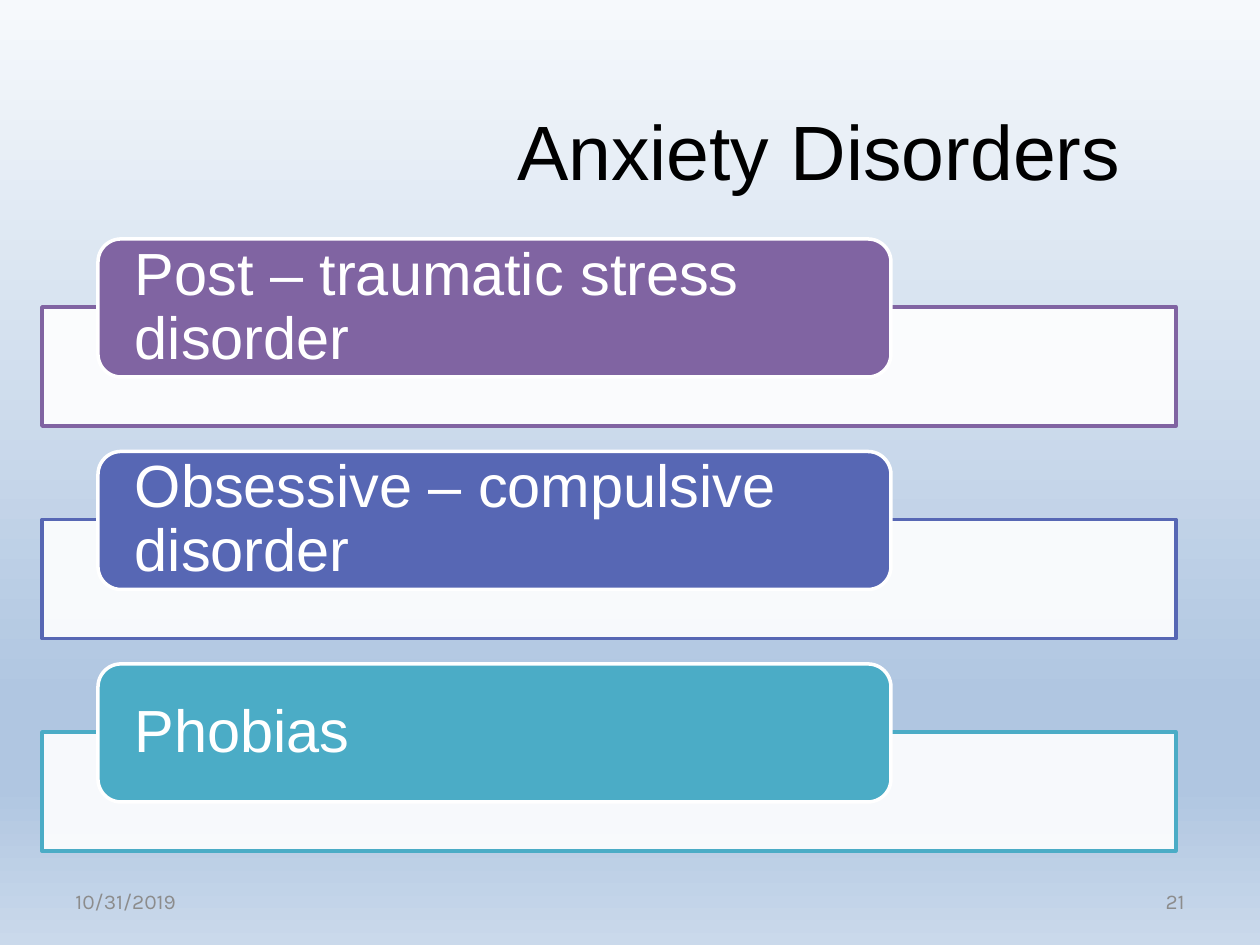
from lxml import etree
from pptx import Presentation, util as u
from pptx.dml.color import RGBColor
from pptx.enum import shapes, text
from pptx.oxml.ns import qn

SCALE = 914400 / 126
COLORS = {"white": "FFFFFF", "black": "000000", "grey": "8C8C8C",
          "purple": "8064A2", "blue": "5767B4", "teal": "4BACC6"}
BACKGROUND = [(0, "F6F9FC"), (74, "B0C6E1"), (83, "B0C6E1"), (100, "CAD9EB")]
DISORDERS = [("Post – traumatic stress disorder", "purple"),
             ("Obsessive – compulsive disorder", "blue"),
             ("Phobias", "teal")]


def px(*values):
    return [u.Emu(round(v * SCALE)) for v in values]


def rgb(name):
    return RGBColor.from_string(COLORS[name])


def add_text(parent, box, content, size, color, font="Arial",
             align=text.PP_ALIGN.LEFT, inset=None, spacing=None):
    tf = parent.add_textbox(*px(*box)).text_frame
    tf.word_wrap = True
    tf.vertical_anchor = text.MSO_ANCHOR.MIDDLE
    if inset is not None:
        tf.margin_left, tf.margin_right = px(inset, inset)
        tf.margin_top = tf.margin_bottom = 0
    p = tf.paragraphs[0]
    p.alignment = align
    p.line_spacing = spacing
    r = p.add_run()
    r.text = content
    r.font.name, r.font.size = font, u.Pt(size)
    r.font.color.rgb = rgb(color)


def add_block(parent, kind, box, fill, line, opacity=100):
    sp = parent.add_shape(kind, *px(*box))
    sp.shadow.inherit = False
    sp.fill.solid()
    sp.fill.fore_color.rgb = rgb(fill)
    sp.line.color.rgb = rgb(line)
    sp.line.width = u.Pt(2)
    if opacity < 100:
        color = sp.fill._xPr.find(".//" + qn("a:srgbClr"))
        etree.SubElement(color, qn("a:alpha"), val=str(opacity * 1000))


def paint_background(s):
    fill = s.background.fill
    fill.gradient()
    fill.gradient_angle = 270
    stops = s.background._cSld.find(".//" + qn("a:gsLst"))
    for stop in list(stops):
        stops.remove(stop)
    for position, color in BACKGROUND:
        stop = etree.SubElement(stops, qn("a:gs"), pos=str(position * 1000))
        etree.SubElement(stop, qn("a:srgbClr"), val=color)


def add_disorder(parent, box, name, color):
    """Place an outlined bar with a rounded label overlapping its top edge."""
    x, y, w, h = box
    label_h, bar_h, pad = 138, 119, 7
    label_x, label_w = x + w // 20, w * 7 // 10
    add_block(parent, shapes.MSO_SHAPE.RECTANGLE,
              (x, y + h - bar_h, w, bar_h), "white", color, opacity=90)
    add_block(parent, shapes.MSO_SHAPE.ROUNDED_RECTANGLE,
              (label_x, y, label_w, label_h), color, "white")
    add_text(parent, (label_x + pad, y + pad, label_w - 2 * pad, label_h - 2 * pad),
             name, 34, "white", inset=30, spacing=0.9)


def add_disorder_list(s, box):
    x, y, w, h = box
    row_h = 187
    pitch = (h - row_h) / (len(DISORDERS) - 1)
    group = s.shapes.add_group_shape().shapes
    for i, (name, color) in enumerate(DISORDERS):
        add_disorder(group, (x, y + i * pitch, w, row_h), name, color)


def add_footer(s, box):
    x, y, w, h = box
    field_w = 294
    add_text(s.shapes, (x, y, field_w, h), "10/31/2019", 12, "grey", font="Karla")
    add_text(s.shapes, (x + w - field_w, y, field_w, h), "21", 12, "grey",
             font="Karla", align=text.PP_ALIGN.RIGHT)


def main():
    prs = Presentation()
    prs.slide_width, prs.slide_height = px(1260, 945)
    s = prs.slides.add_slide(prs.slide_layouts[6])
    paint_background(s)
    add_text(s.shapes, (399, 85, 840, 130), "Anxiety Disorders", 44, "black",
             align=text.PP_ALIGN.CENTER)
    add_disorder_list(s, (42, 239, 1134, 612))
    add_footer(s, (63, 876, 1134, 50))
    prs.save("out.pptx")


if __name__ == "__main__":
    main()
